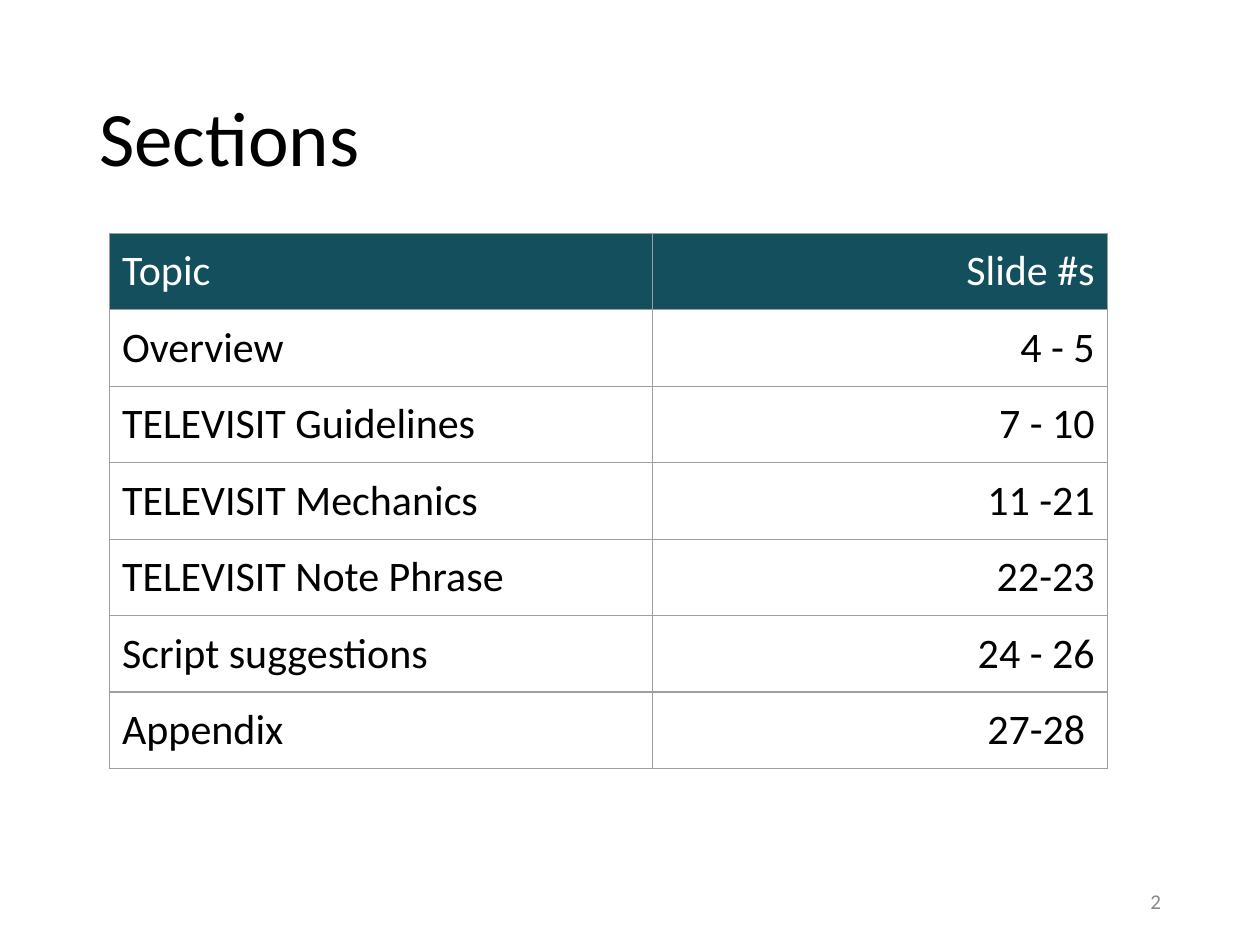
from lxml.etree import SubElement
from pptx import Presentation
from pptx.dml.color import RGBColor
from pptx.enum.text import MSO_ANCHOR, PP_ALIGN
from pptx.oxml.ns import qn
from pptx.util import Pt

TITLE = "Sections"
NUMBER = "2"
ROWS = [
    ("Topic", "Slide #s"),
    ("Overview", "4 - 5"),
    ("TELEVISIT Guidelines", "7 - 10"),
    ("TELEVISIT Mechanics", "11 -21"),
    ("TELEVISIT Note Phrase", "22-23"),
    ("Script suggestions", "24 - 26"),
    ("Appendix", "27-28 "),
]
COLORS = {"text": "000000", "head": "134F5C", "light": "FFFFFF",
          "rule": "9E9E9E", "number": "888888"}
ALIGNS = (PP_ALIGN.LEFT, PP_ALIGN.RIGHT)
WIDTHS = (310.3, 259.9)
ROW = 43.2
PAD = Pt(7.2)


def style(frame, size, color, align):
    para = frame.paragraphs[0]
    para.alignment = align
    font = para.runs[0].font
    font.name = "Calibri"
    font.size = Pt(size)
    font.bold = False
    font.color.rgb = RGBColor.from_string(COLORS[color])


def place(shape, left, top, width, height):
    shape.left, shape.top = Pt(left), Pt(top)
    shape.width, shape.height = Pt(width), Pt(height)


def border(cell):
    """Draw all four sides; they must come before the fill in the XML."""
    props = cell._tc.get_or_add_tcPr()
    for side in ("a:lnL", "a:lnR", "a:lnT", "a:lnB"):
        line = SubElement(props, qn(side), w=str(Pt(0.75)))
        fill = SubElement(line, qn("a:solidFill"))
        SubElement(fill, qn("a:srgbClr"), val=COLORS["rule"])


def fill_cell(cell, text, align, head):
    cell.margin_left = cell.margin_right = PAD
    cell.margin_top = cell.margin_bottom = PAD
    border(cell)
    if head:
        cell.fill.solid()
        cell.fill.fore_color.rgb = RGBColor.from_string(COLORS["head"])
    else:
        cell.fill.background()
    cell.text_frame.text = text
    style(cell.text_frame, 24, "light" if head else "text", align)


def main():
    deck = Presentation()
    deck.slide_width, deck.slide_height = Pt(720), Pt(540)
    slide = deck.slides.add_slide(deck.slide_layouts[5])

    title = slide.shapes.title
    place(title, 49.5, 28.75, 621, 104.4)
    title.text_frame.text = TITLE
    title.text_frame.vertical_anchor = MSO_ANCHOR.MIDDLE
    title.text_frame.paragraphs[0].line_spacing = 0.9
    style(title.text_frame, 44, "text", PP_ALIGN.LEFT)

    table = slide.shapes.add_table(
        len(ROWS), len(WIDTHS), Pt(62.6), Pt(133.2),
        Pt(sum(WIDTHS)), Pt(ROW * len(ROWS))).table
    table.horz_banding = False
    for col, width in zip(table.columns, WIDTHS):
        col.width = Pt(width)
    for r, row in enumerate(ROWS):
        for c, text in enumerate(row):
            fill_cell(table.cell(r, c), text, ALIGNS[c], r == 0)

    number = slide.shapes.add_textbox(Pt(508.5), Pt(500.5), Pt(162), Pt(28.75))
    frame = number.text_frame
    frame.word_wrap = True
    frame.vertical_anchor = MSO_ANCHOR.MIDDLE
    frame.text = NUMBER
    style(frame, 12, "number", PP_ALIGN.RIGHT)

    deck.save("out.pptx")


if __name__ == "__main__":
    main()
